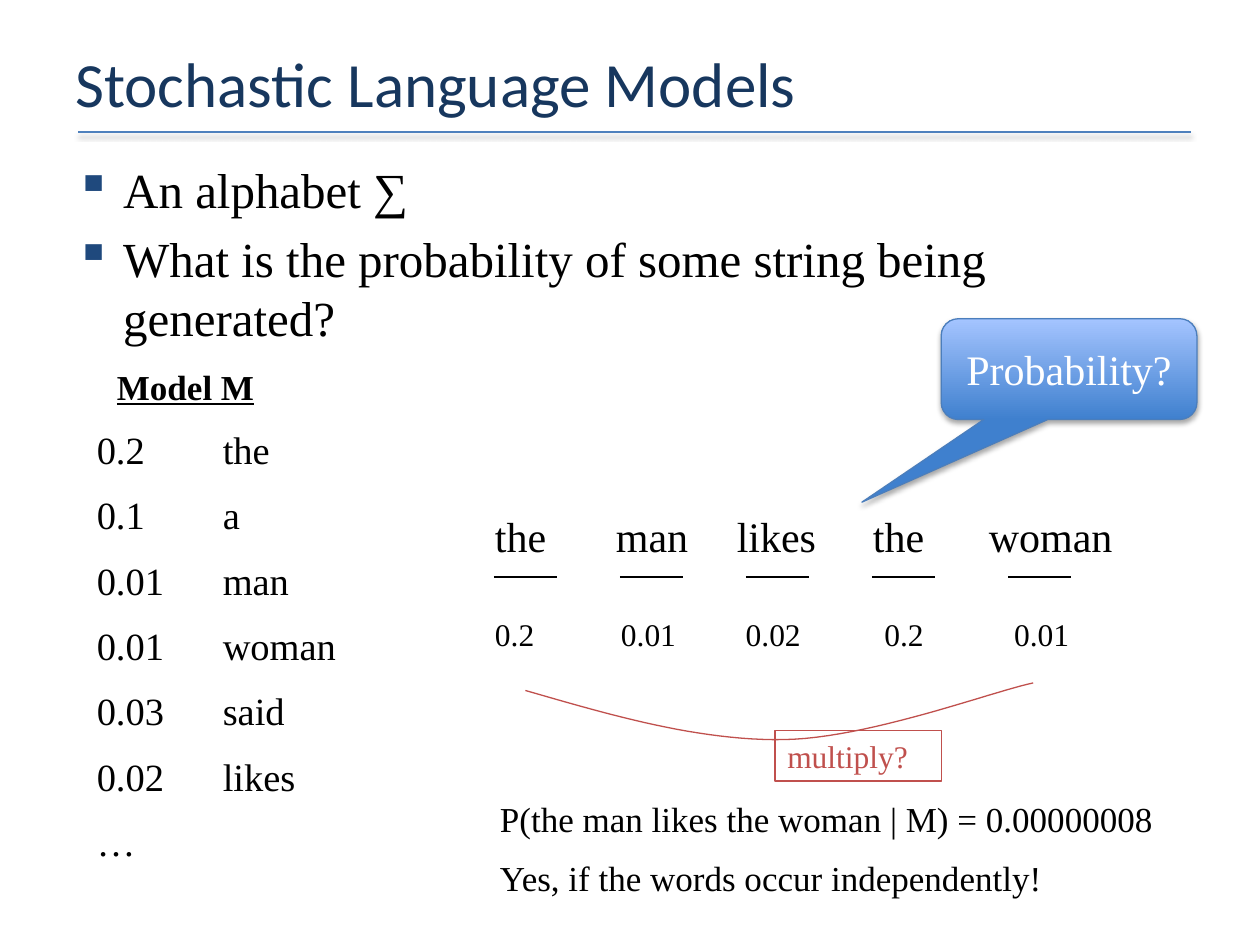
from lxml import etree
from pptx import Presentation
from pptx import util as u
from pptx.dml.color import RGBColor
from pptx.enum import shapes, text
from pptx.oxml import parse_xml
from pptx.oxml.ns import nsdecls, qn

PX = 9144  # 100 px to the inch
COLORS = {
    "title": "17375E", "bullet": "1F497D", "rule": "4F81BD",
    "ink": "000000", "red": "C0504D", "white": "FFFFFF",
    "call_dark": "3F80CE", "call_light": "A4C4FF", "call_edge": "4B7EBC",
}
SERIF = "Times New Roman"


def write(shape, lines, size, color="ink", font=SERIF, gap=0.5,
          anchor=text.MSO_ANCHOR.TOP, align=text.PP_ALIGN.LEFT):
    """Fill a shape with one-run paragraphs; gap is a share of the text size."""
    frame = shape.text_frame
    frame.word_wrap = True
    frame.vertical_anchor = anchor
    for i, line in enumerate(lines):
        para = frame.add_paragraph() if i else frame.paragraphs[0]
        para.alignment = align
        para.space_before = u.Pt(size * gap) if i else u.Pt(0)
        span = para.add_run()
        span.text = line
        span.font.size = u.Pt(size)
        span.font.name = font
        span.font.color.rgb = RGBColor.from_string(COLORS[color])
    return frame.paragraphs


def outline(shape, color, width, shadow_alpha=0):
    """Set the line, and a soft shadow below or none at all."""
    shape.line.color.rgb = RGBColor.from_string(COLORS[color])
    shape.line.width = u.Pt(width)
    effects = parse_xml(f"<a:effectLst {nsdecls('a')}/>")
    if shadow_alpha:
        shadow = etree.SubElement(effects, qn("a:outerShdw"), blurRad="40000",
                                  dist="22000", dir="5400000", rotWithShape="0")
        tint = etree.SubElement(shadow, qn("a:srgbClr"), val=COLORS["ink"])
        etree.SubElement(tint, qn("a:alpha"), val=str(shadow_alpha * 1000))
    shape._element.spPr.append(effects)


deck = Presentation()
deck.slide_width, deck.slide_height = 1000 * PX, 750 * PX
page = deck.slides.add_slide(deck.slide_layouts[6])
items = page.shapes

# Title and rule
rule = items.add_connector(shapes.MSO_CONNECTOR.STRAIGHT,
                           62 * PX, 105 * PX, 945 * PX, 105 * PX)
outline(rule, "rule", 1, shadow_alpha=38)
box = items.add_textbox(50 * PX, 30 * PX, 900 * PX, 71 * PX)
write(box, ["Stochastic Language Models"], 36, "title", "Calibri",
      anchor=text.MSO_ANCHOR.MIDDLE)

# Bullets
box = items.add_textbox(50 * PX, 122 * PX, 850 * PX, 153 * PX)
bullets = ["An alphabet ∑", "What is the probability of some string being generated?"]
for para in write(box, bullets, 28, gap=0.2):
    para.space_before = u.Pt(5.6)
    props = para._p.get_or_add_pPr()
    props.set("marL", str(38 * PX))
    props.set("indent", str(-38 * PX))
    bullet_color = etree.SubElement(props, qn("a:buClr"))
    etree.SubElement(bullet_color, qn("a:srgbClr"), val=COLORS["bullet"])
    etree.SubElement(props, qn("a:buChar"), char="▪")

# Model M: probability and word, aligned by a tab stop
box = items.add_textbox(83 * PX, 285 * PX, 150 * PX, 44 * PX)
heading = write(box, ["Model M"], 20)[0].runs[0]
heading.font.bold = True
heading.font.underline = True

model = ["0.2\tthe", "0.1\ta", "0.01\tman", "0.01\twoman",
         "0.03\tsaid", "0.02\tlikes", "…"]
box = items.add_textbox(67 * PX, 333 * PX, 267 * PX, 380 * PX)
for para in write(box, model, 22):
    tabs = etree.SubElement(para._p.get_or_add_pPr(), qn("a:tabLst"))
    etree.SubElement(tabs, qn("a:tab"), pos=str(100 * PX), algn="l")

# Sentence: word, line and probability
sentence = [
    # word, word left, line left, value, value left, width
    ("the", 383, 392, "0.2", 383, 67),
    ("man", 479, 492, "0.01", 483, 83),
    ("likes", 575, 592, "0.02", 582, 83),
    ("the", 683, 692, "0.2", 692, 83),
    ("woman", 775, 800, "0.01", 795, 150),
]
for word, word_left, line_left, value, value_left, width in sentence:
    box = items.add_textbox(word_left * PX, 400 * PX, width * PX, 50 * PX)
    write(box, [word], 24)
    box = items.add_textbox(value_left * PX, 483 * PX, width * PX, 50 * PX)
    write(box, [value], 18)
    line = items.add_connector(shapes.MSO_CONNECTOR.STRAIGHT, line_left * PX,
                               458 * PX, (line_left + 50) * PX, 458 * PX)
    outline(line, "ink", 0.75)

# Curve under the values, two cubic pieces in short steps
pieces = [
    [(417, 548), (486, 568), (555, 588), (622, 587)],
    [(622, 587), (689, 586), (787, 549), (820, 542)],
]
STEPS = 24
points = []
for piece in pieces:
    for step in range(1, STEPS + 1):
        t = step / STEPS
        weights = ((1 - t) ** 3, 3 * t * (1 - t) ** 2, 3 * t * t * (1 - t), t ** 3)
        points.append([sum(w * point[axis] for w, point in zip(weights, piece)) * PX
                       for axis in (0, 1)])
builder = items.build_freeform(417 * PX, 548 * PX)
builder.add_line_segments(points, close=False)
curve = builder.convert_to_shape()
curve.fill.background()
outline(curve, "red", 0.75)

# Multiply label
label = items.add_shape(shapes.MSO_SHAPE.RECTANGLE, 615 * PX, 580 * PX, 132 * PX, 40 * PX)
label.fill.background()
outline(label, "red", 0.75)
write(label, ["multiply?"], 18, "red")

# Result
box = items.add_textbox(387 * PX, 628 * PX, 567 * PX, 94 * PX)
write(box, ["P(the man likes the woman | M) = 0.00000008",
            "Yes, if the words occur independently!"], 20)

# Callout
callout = items.add_shape(shapes.MSO_SHAPE.ROUNDED_RECTANGULAR_CALLOUT,
                          747 * PX, 253 * PX, 203 * PX, 80 * PX)
for i, amount in enumerate((-0.81, 1.32, 0.17)):
    callout.adjustments[i] = amount
callout.fill.gradient()
callout.fill.gradient_angle = 90
for stop, shade in zip(callout.fill.gradient_stops, ("call_dark", "call_light")):
    stop.color.rgb = RGBColor.from_string(COLORS[shade])
outline(callout, "call_edge", 0.75, shadow_alpha=35)
write(callout, ["Probability?"], 24, "white",
      anchor=text.MSO_ANCHOR.MIDDLE, align=text.PP_ALIGN.CENTER)

deck.save("out.pptx")
